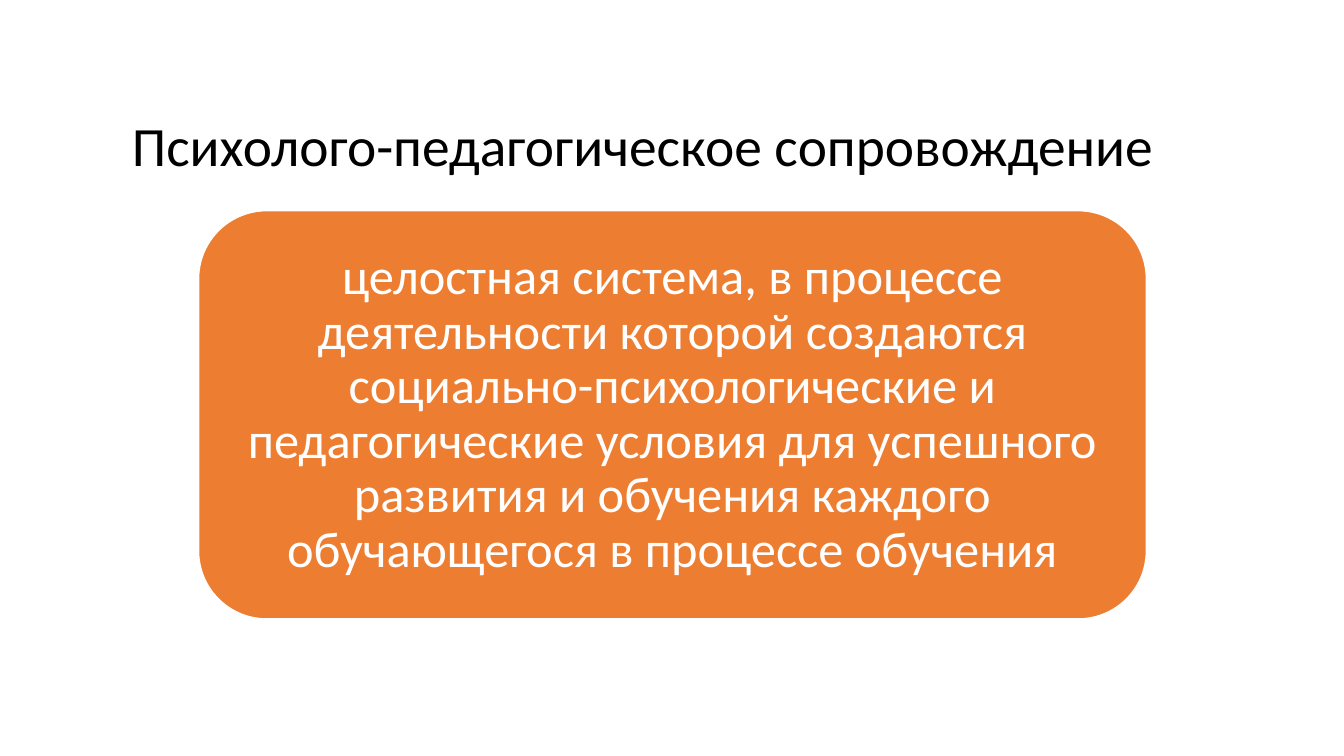
"""Build a slide that defines psychological and pedagogical support."""
import dataclasses
import typing

import pptx
import pptx.dml.color
import pptx.enum.shapes
import pptx.enum.text
import pptx.slide
import pptx.util

Inches = pptx.util.Inches
RGBColor = pptx.dml.color.RGBColor
Align = pptx.enum.text.PP_ALIGN

BLACK = RGBColor(0x00, 0x00, 0x00)
WHITE = RGBColor(0xFF, 0xFF, 0xFF)
ORANGE = RGBColor(0xED, 0x7D, 0x31)


@dataclasses.dataclass(frozen=True)
class Block:
    text: str
    box: tuple[float, float, float, float]
    size: float
    color: RGBColor
    align: Align
    margin_x: float
    margin_y: float
    fill: typing.Optional[RGBColor] = None


BLOCKS = (
    Block("Психолого-педагогическое сопровождение",
          (1.21, 1.16, 11.5, 0.62), 39.6, BLACK, Align.LEFT, 0.1, 0.05),
    Block("целостная система, в процессе деятельности которой создаются "
          "социально-психологические и педагогические условия для успешного "
          "развития и обучения каждого обучающегося в процессе обучения",
          (1.97, 2.09, 9.4, 4.05), 36, WHITE, Align.CENTER, 0.15, 0.15, ORANGE),
)


def set_attributes(target: typing.Any, values: dict[str, typing.Any]) -> None:
    for name, value in values.items():
        setattr(target, name, value)


def draw_block(s: pptx.slide.Slide, block: Block) -> None:
    box = [Inches(v) for v in block.box]
    if block.fill is None:
        sp = s.shapes.add_textbox(*box)
    else:
        sp = s.shapes.add_shape(
            pptx.enum.shapes.MSO_SHAPE.ROUNDED_RECTANGLE, *box)
        sp.shadow.inherit = False
        sp.fill.solid()
        sp.fill.fore_color.rgb = block.fill
        sp.line.color.rgb = WHITE
        sp.line.width = pptx.util.Pt(1)
    tf = sp.text_frame
    set_attributes(tf, {
        "word_wrap": True,
        "vertical_anchor": pptx.enum.text.MSO_ANCHOR.MIDDLE,
        "margin_left": Inches(block.margin_x),
        "margin_right": Inches(block.margin_x),
        "margin_top": Inches(block.margin_y),
        "margin_bottom": Inches(block.margin_y),
    })
    p = tf.paragraphs[0]
    set_attributes(p, {"alignment": block.align, "line_spacing": 0.9})
    r = p.add_run()
    r.text = block.text
    set_attributes(r.font, {"name": "Calibri", "size": pptx.util.Pt(block.size)})
    r.font.color.rgb = block.color


def main() -> None:
    prs = pptx.Presentation()
    set_attributes(prs, {"slide_width": Inches(13.33),
                         "slide_height": Inches(7.5)})
    s = prs.slides.add_slide(prs.slide_layouts[6])
    for block in BLOCKS:
        draw_block(s, block)
    prs.save("out.pptx")


if __name__ == "__main__":
    main()
